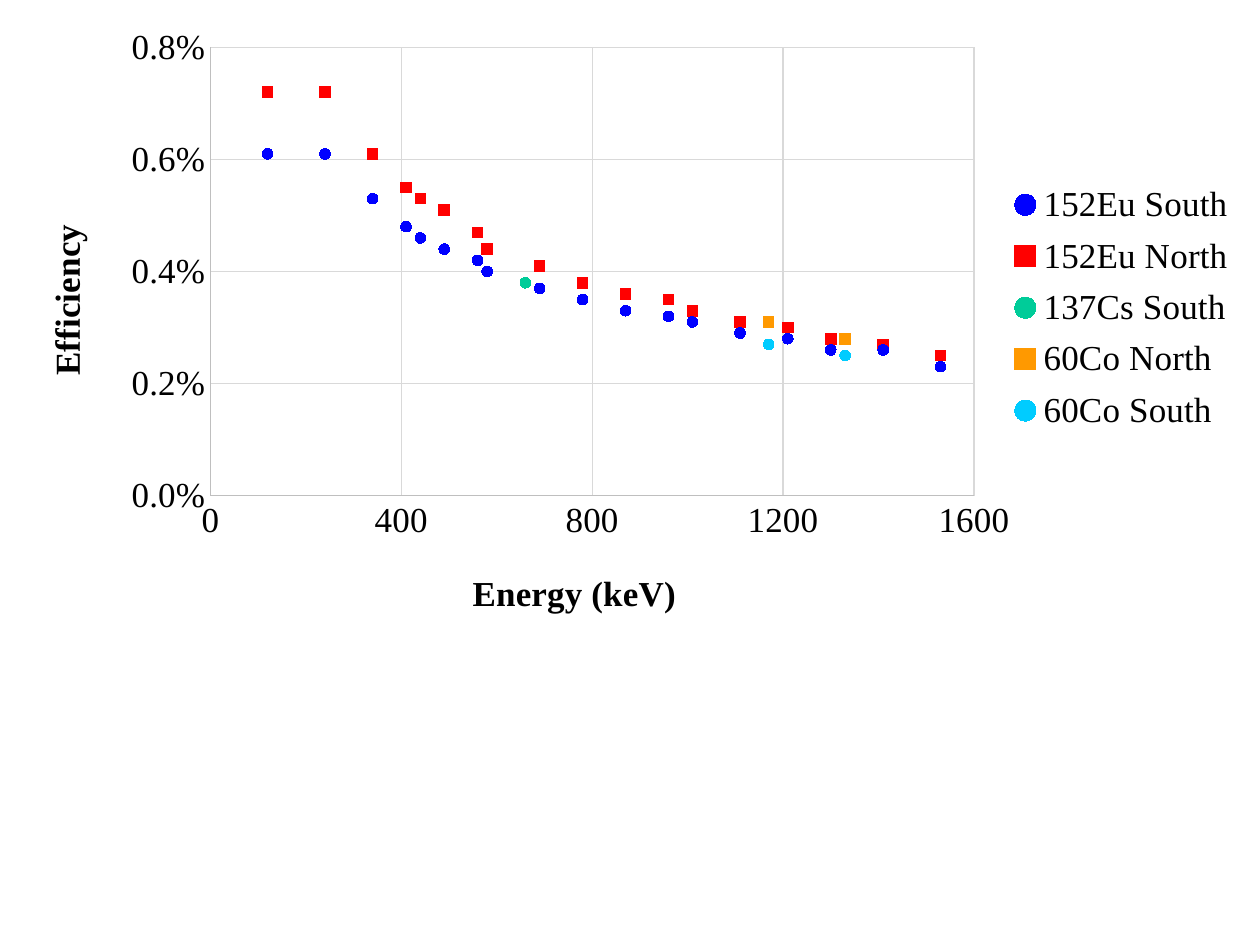
from pptx import Presentation
from pptx.chart.data import XyChartData
from pptx.dml.color import RGBColor
from pptx.enum.chart import (XL_CHART_TYPE as ChartType, XL_LEGEND_POSITION as LegendPosition,
                             XL_MARKER_STYLE as Marker, XL_TICK_MARK as TickMark)
from pptx.oxml import parse_xml
from pptx.oxml.ns import nsdecls, qn
from pptx.util import Pt

FONT = "Times New Roman"
EU_ENERGIES = [120, 240, 340, 410, 440, 490, 560, 580, 690,
               780, 870, 960, 1010, 1110, 1210, 1300, 1410, 1530]
CO_ENERGIES = [1170, 1330]
EU_SOUTH = [0.61, 0.61, 0.53, 0.48, 0.46, 0.44, 0.42, 0.40, 0.37,
            0.35, 0.33, 0.32, 0.31, 0.29, 0.28, 0.26, 0.26, 0.23]
EU_NORTH = [0.72, 0.72, 0.61, 0.55, 0.53, 0.51, 0.47, 0.44, 0.41,
            0.38, 0.36, 0.35, 0.33, 0.31, 0.30, 0.28, 0.27, 0.25]
SOURCES = [
    ("152Eu South", EU_ENERGIES, EU_SOUTH, Marker.CIRCLE, "0000FF"),
    ("152Eu North", EU_ENERGIES, EU_NORTH, Marker.SQUARE, "FF0000"),
    ("137Cs South", [660], [0.38], Marker.CIRCLE, "00CC99"),
    ("60Co North", CO_ENERGIES, [0.31, 0.28], Marker.SQUARE, "FF9900"),
    ("60Co South", CO_ENERGIES, [0.27, 0.25], Marker.CIRCLE, "00CCFF"),
]


def color(hex_value):
    """Return the colour for a hex string."""
    return RGBColor.from_string(hex_value)


def style_font(font, bold):
    """Give a font the chart's face, size and colour."""
    font.name, font.size, font.bold = FONT, Pt(20), bold
    font.color.rgb = color("000000")


def style_line(line, hex_value):
    """Draw a thin solid line."""
    line.width = Pt(0.75)
    line.color.rgb = color(hex_value)


def place(part, x, y, width=None, height=None):
    """Set a chart part's manual layout as fractions of the chart."""
    for layout in part.findall(qn("c:layout")):
        part.remove(layout)
    is_plot = part.tag == qn("c:plotArea")
    settings = [("layoutTarget", "inner")] if is_plot else []
    settings += [("xMode", "edge"), ("yMode", "edge"), ("x", x), ("y", y)]
    if width:
        settings += [("w", width), ("h", height)]
    body = "".join(f'<c:{tag} val="{value}"/>' for tag, value in settings)
    part.insert(0 if is_plot else 1, parse_xml(
        f'<c:layout {nsdecls("c")}><c:manualLayout>{body}</c:manualLayout></c:layout>'))


def style_axis(axis, title, maximum, major, number_format, title_at, rotation):
    """Set an axis's scale, lines, labels and title."""
    axis.minimum_scale, axis.maximum_scale, axis.major_unit = 0, maximum, major
    axis.major_tick_mark = axis.minor_tick_mark = TickMark.NONE
    axis.has_major_gridlines = True
    style_line(axis.major_gridlines.format.line, "D9D9D9")
    style_line(axis.format.line, "BFBFBF")
    axis.tick_labels.number_format = number_format
    axis.tick_labels.number_format_is_linked = False
    style_font(axis.tick_labels.font, False)
    frame = axis.axis_title.text_frame
    run = frame.paragraphs[0].add_run()
    run.text = title
    style_font(run.font, True)
    title_element = axis.axis_title._element
    title_element.find(".//" + qn("a:bodyPr")).set("rot", str(rotation))
    place(title_element, *title_at)


def add_efficiency_chart(slide, left, top, width, height):
    """Add the scatter chart of detector efficiency against energy."""
    data = XyChartData()
    for name, energies, percents, _, _ in SOURCES:
        points = data.add_series(name)
        for energy, percent in zip(energies, percents):
            points.add_data_point(energy, round(percent / 100, 4))
    chart = slide.shapes.add_chart(ChartType.XY_SCATTER, left, top, width, height, data).chart
    chart.has_title = False
    style_font(chart.font, False)
    plot = chart.plots[0]
    plot.vary_by_categories = False
    for series, (_, _, _, symbol, hex_value) in zip(plot.series, SOURCES):
        series.format.line.fill.background()
        series.marker.style, series.marker.size = symbol, 6
        series.marker.format.fill.solid()
        series.marker.format.fill.fore_color.rgb = color(hex_value)
        series.marker.format.line.color.rgb = color(hex_value)
    style_axis(chart.category_axis, "Energy (keV)", 1600, 400, "General", (0.37, 0.88), 0)
    style_axis(chart.value_axis, "Efficiency", 0.008, 0.002, "0.0%", (0.03, 0.34), -5400000)
    chart.has_legend = True
    chart.legend.position = LegendPosition.RIGHT
    chart.legend.include_in_layout = False
    style_font(chart.legend.font, False)
    place(chart.legend._element, 0.79, 0.27, 0.2, 0.42)
    place(chart._chartSpace.find(".//" + qn("c:plotArea")), 0.167, 0.074, 0.606, 0.699)


def main():
    """Build and save the slide."""
    deck = Presentation()
    deck.slide_width, deck.slide_height = Pt(720), Pt(540)
    slide = deck.slides.add_slide(deck.slide_layouts[6])
    add_efficiency_chart(slide, Pt(0), Pt(0), Pt(720), Pt(366.5))
    deck.save("out.pptx")


if __name__ == "__main__":
    main()
